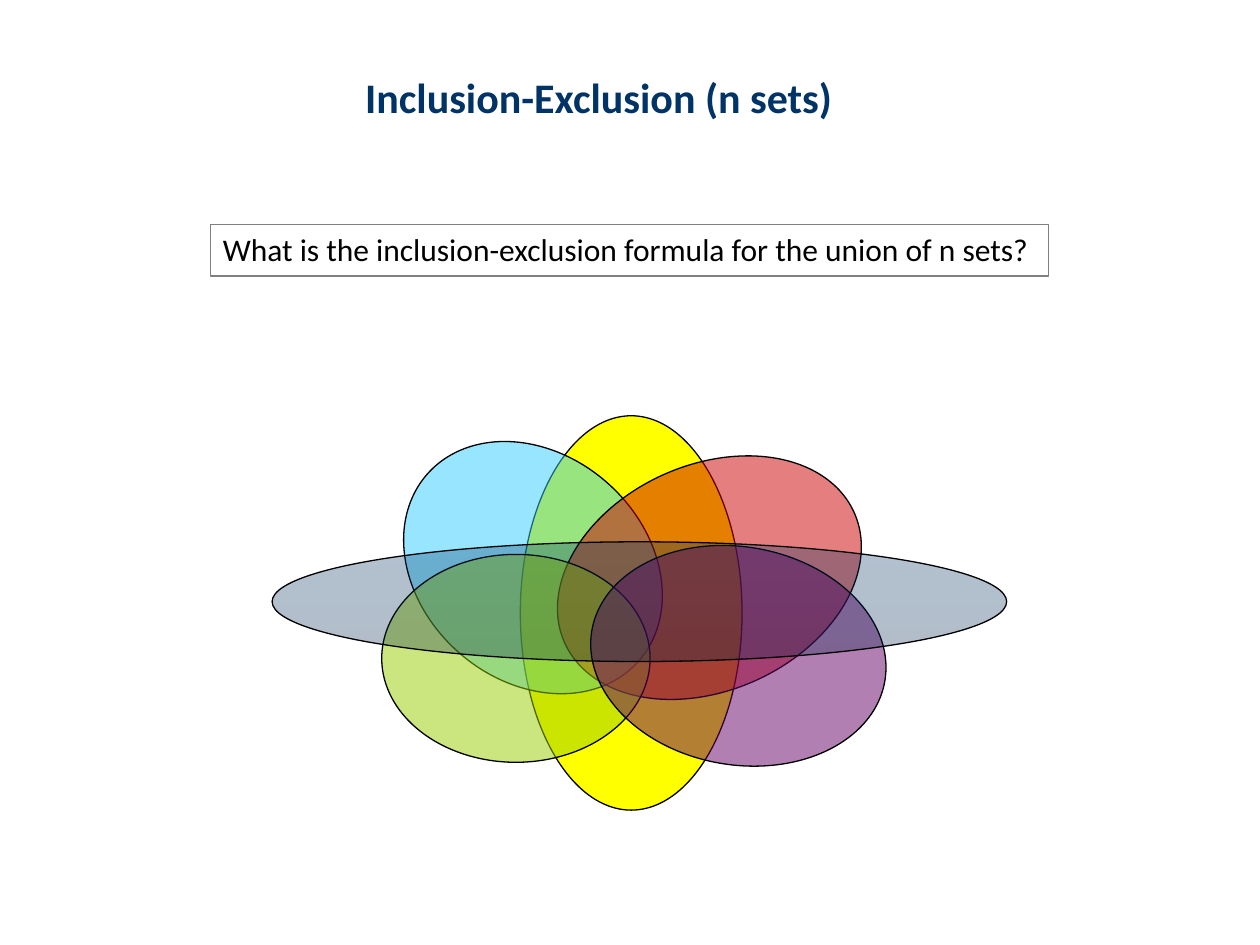
"""Build the inclusion-exclusion slide with its overlapping ellipses."""
import lxml.etree
import pptx
import pptx.dml.color
import pptx.enum.shapes
import pptx.enum.text
import pptx.oxml.ns
import pptx.util

Inches = pptx.util.Inches
Pt = pptx.util.Pt
RGBColor = pptx.dml.color.RGBColor
Shape = pptx.enum.shapes.MSO_SHAPE

NAVY = RGBColor(0x00, 0x33, 0x66)
DARK = RGBColor(0x00, 0x24, 0x49)
BLACK = RGBColor(0x00, 0x00, 0x00)
GRAY = RGBColor(0x80, 0x80, 0x80)
YELLOW = RGBColor(0xFF, 0xFF, 0x00)
SKY = RGBColor(0x33, 0xCC, 0xFF)
RED = RGBColor(0xCC, 0x00, 0x00)
LIME = RGBColor(0x99, 0xCC, 0x00)
PLUM = RGBColor(0x66, 0x00, 0x66)


class Deck:
    def __init__(self, slide):
        self.slide = slide
        self.face = "Calibri"
        self.width = Pt(0.75)

    def edge(self, shape, color):
        shape.line.color.rgb = color
        shape.line.width = self.width

    def text(self, box, words, size, color, bold=False):
        shape = self.slide.shapes.add_textbox(*map(Inches, box))
        frame = shape.text_frame
        frame.word_wrap = True
        frame.vertical_anchor = pptx.enum.text.MSO_ANCHOR.TOP
        run = frame.paragraphs[0].add_run()
        run.text = words
        style = {"name": self.face, "size": Pt(size), "bold": bold}
        for key, value in style.items():
            setattr(run.font, key, value)
        run.font.color.rgb = color
        return shape

    def oval(self, box, colors, alpha=100, turn=0):
        shape = self.slide.shapes.add_shape(Shape.OVAL, *map(Inches, box))
        shape.shadow.inherit = False
        shape.rotation = turn
        if len(colors) > 1:
            shape.fill.gradient()
            shape.fill.gradient_angle = 270
            for stop, color in zip(shape.fill.gradient_stops, colors):
                stop.color.rgb = color
        else:
            shape.fill.solid()
            shape.fill.fore_color.rgb = colors[0]
        if alpha < 100:
            qn = pptx.oxml.ns.qn
            for node in list(shape.element.spPr.iter(qn("a:srgbClr"))):
                lxml.etree.SubElement(node, qn("a:alpha"), val=str(alpha * 1000))
        self.edge(shape, BLACK)


def main():
    show = pptx.Presentation()
    show.slide_width = Inches(10)
    show.slide_height = Inches(7.5)
    deck = Deck(show.slides.add_slide(show.slide_layouts[6]))

    deck.text((2.8, 0.52, 4.41, 0.5), "Inclusion-Exclusion (n sets)", 24, NAVY, True)
    ovals = [
        ((4.13, 3.3, 1.76, 3.13), [YELLOW], 100, 0),
        ((3.11, 3.61, 2.24, 1.79), [SKY], 50, 41.7),
        ((4.37, 3.69, 2.52, 1.79), [RED], 50, 335.7),
        ((3.03, 4.4, 2.13, 1.65), [LIME], 50, 0),
        ((4.68, 4.34, 2.36, 1.73), [PLUM], 50, 9.9),
        ((2.16, 4.3, 5.83, 0.95), [NAVY, DARK], 30, 0),
    ]
    for oval in ovals:
        deck.oval(*oval)
    query = "What is the inclusion-exclusion formula for the union of n sets?"
    deck.edge(deck.text((1.67, 1.78, 6.65, 0.41), query, 18, BLACK), GRAY)
    show.save("out.pptx")


if __name__ == "__main__":
    main()
